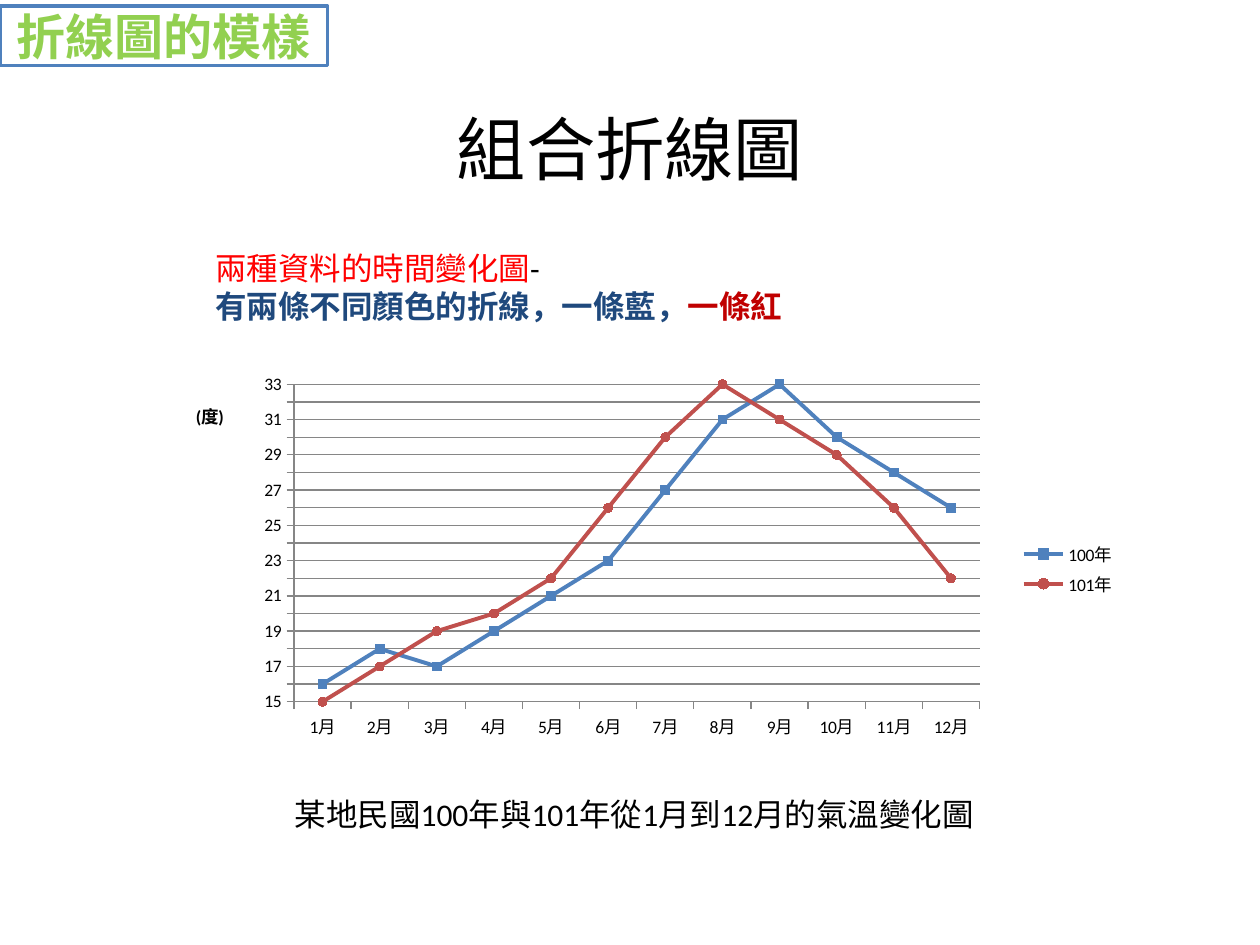
from lxml.etree import SubElement
from pptx import Presentation
from pptx.chart.data import CategoryChartData
from pptx.dml.color import RGBColor
from pptx.enum.chart import XL_CHART_TYPE, XL_LEGEND_POSITION, XL_MARKER_STYLE, XL_TICK_MARK
from pptx.enum.shapes import MSO_SHAPE
from pptx.enum.text import MSO_ANCHOR, MSO_AUTO_SIZE, PP_ALIGN
from pptx.oxml.ns import qn
from pptx.util import Inches, Pt

COLORS = {
    "black": "000000", "white": "FFFFFF", "red": "FF0000", "dark_red": "C00000",
    "navy": "1F497D", "green": "92D050", "blue": "4F81BD", "brick": "C0504D",
    "grid": "868686",
}
TEMPERATURES = {
    "100年": [16, 18, 17, 19, 21, 23, 27, 31, 33, 30, 28, 26],
    "101年": [15, 17, 19, 20, 22, 26, 30, 33, 31, 29, 26, 22],
}
SERIES_STYLES = [("blue", XL_MARKER_STYLE.SQUARE), ("brick", XL_MARKER_STYLE.CIRCLE)]


def color(name):
    """Return the named colour."""
    return RGBColor.from_string(COLORS[name])


def style_font(font, size=18, tint="black", bold=False, name="Calibri"):
    """Format a font."""
    font.size, font.bold, font.name = Pt(size), bold, name
    font.color.rgb = color(tint)


def add_text(para, text, align=None, **style):
    """Add a formatted span to a paragraph."""
    span = para.add_run()
    span.text = text
    style_font(span.font, **style)
    if align is not None:
        para.alignment = align


def place(shape, left, top, width, height):
    """Position a shape with lengths in inches."""
    shape.left, shape.top = Inches(left), Inches(top)
    shape.width, shape.height = Inches(width), Inches(height)


def add_title(page, text):
    """Fill the title placeholder."""
    title = page.shapes.title
    place(title, 0.5, 0.28, 9, 1.25)
    frame = title.text_frame
    frame.auto_size = MSO_AUTO_SIZE.NONE
    frame.vertical_anchor = MSO_ANCHOR.TOP
    frame.margin_top = Inches(0.56)
    add_text(frame.paragraphs[0], text, align=PP_ALIGN.CENTER, size=39.6)


def add_text_box(page, bounds, lines):
    """Add a wrapped text box from lines of (text, style) spans."""
    box = page.shapes.add_textbox(*map(Inches, bounds))
    frame = box.text_frame
    frame.word_wrap = True
    for index, spans in enumerate(lines):
        para = frame.add_paragraph() if index else frame.paragraphs[0]
        for text, style in spans:
            add_text(para, text, **style)


def add_label(page, text):
    """Add the outlined section label."""
    label = page.shapes.add_shape(MSO_SHAPE.RECTANGLE, *map(Inches, (0, 0.05, 2.6, 0.47)))
    label.shadow.inherit = False
    label.fill.solid()
    label.fill.fore_color.rgb = color("white")
    label.line.color.rgb = color("blue")
    label.line.width = Pt(2)
    frame = label.text_frame
    frame.vertical_anchor = MSO_ANCHOR.MIDDLE
    add_text(frame.paragraphs[0], text, align=PP_ALIGN.CENTER, size=28, tint="green",
             bold=True, name="Noto Sans CJK JP")


def set_layout(element, **values):
    """Give a chart part a manual layout."""
    layout = element.find(qn("c:layout"))
    if layout is None:
        layout = SubElement(element, qn("c:layout"))
        overlay = element.find(qn("c:overlay"))
        if overlay is not None:
            overlay.addprevious(layout)
    manual = SubElement(layout, qn("c:manualLayout"))
    for tag, value in values.items():
        SubElement(manual, qn(f"c:{tag}")).set("val", str(value))


def style_axes(chart):
    """Format both axes and the value axis title."""
    for axis in (chart.category_axis, chart.value_axis):
        axis.major_tick_mark = XL_TICK_MARK.OUTSIDE
        axis.format.line.color.rgb = color("grid")
        style_font(axis.tick_labels.font, size=10)
    values = chart.value_axis
    values.minimum_scale, values.maximum_scale, values.major_unit = 15, 33, 1
    values.major_gridlines.format.line.color.rgb = color("grid")
    frame = values.axis_title.text_frame
    add_text(frame.paragraphs[0], "(度)", size=10, bold=True)
    body = frame._txBody.find(qn("a:bodyPr"))
    body.set("rot", "0")
    body.set("vert", "horz")
    set_layout(values.axis_title._element, xMode="edge", yMode="edge", x=0.04, y=0.07)


def add_temperature_chart(page):
    """Add the two-year temperature line chart."""
    data = CategoryChartData()
    data.categories = [f"{month}月" for month in range(1, 13)]
    for name, values in TEMPERATURES.items():
        data.add_series(name, values)
    bounds = map(Inches, (1.22, 2.94, 7.73, 3.15))
    chart = page.shapes.add_chart(XL_CHART_TYPE.LINE_MARKERS, *bounds, data).chart
    style_font(chart.font, size=10)
    chart.has_title = False
    chart.has_legend = True
    chart.legend.position = XL_LEGEND_POSITION.RIGHT
    chart.legend.include_in_layout = False
    style_font(chart.legend.font, size=10)
    style_axes(chart)
    plot = chart.plots[0]
    plot.vary_by_categories = False
    for series, (tint, marker) in zip(plot.series, SERIES_STYLES):
        series.smooth = False
        series.format.line.color.rgb = color(tint)
        series.format.line.width = Pt(2.25)
        series.marker.style, series.marker.size = marker, 5
        series.marker.format.fill.solid()
        series.marker.format.fill.fore_color.rgb = color(tint)
        series.marker.format.line.color.rgb = color(tint)
    area = chart._chartSpace.chart.plotArea
    if area.find(qn("c:layout")) is None:
        area.insert(0, area.makeelement(qn("c:layout")))
    set_layout(area, layoutTarget="inner", xMode="edge", yMode="edge",
               x=0.144, y=0.035, w=0.704, h=0.8)


def main():
    """Build and save the slide."""
    deck = Presentation()
    deck.slide_width, deck.slide_height = Inches(10), Inches(7.5)
    page = deck.slides.add_slide(deck.slide_layouts[5])
    add_title(page, "組合折線圖")
    add_text_box(page, (2.24, 6.26, 5.63, 0.71),
                 [[("某地民國100年與101年從1月到12月的氣溫變化圖", {})]])
    add_temperature_chart(page)
    add_text_box(page, (1.61, 1.93, 6.46, 0.71), [
        [("兩種資料的時間變化圖", {"tint": "red"}), ("-", {})],
        [("有兩條不同顏色的折線，一條藍，", {"tint": "navy", "bold": True}),
         ("一條紅", {"tint": "dark_red", "bold": True})],
    ])
    add_label(page, "折線圖的模樣")
    deck.save("out.pptx")


if __name__ == "__main__":
    main()
